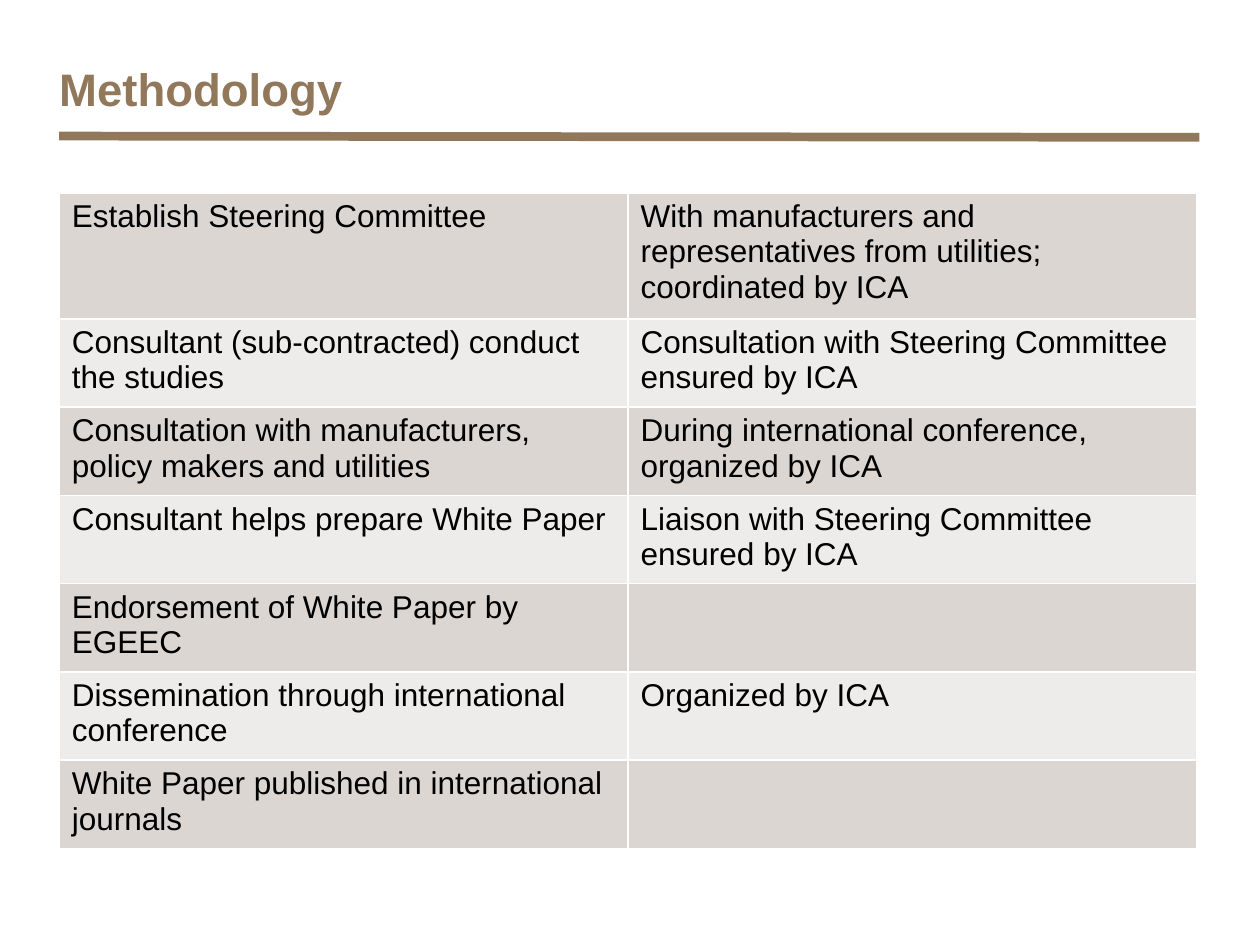
from lxml import etree
from pptx import Presentation
from pptx.dml.color import RGBColor
from pptx.enum.shapes import MSO_CONNECTOR
from pptx.oxml.ns import qn
from pptx.util import Inches, Pt

STRAIGHT = MSO_CONNECTOR.STRAIGHT

# Content
TITLE = "Methodology"
STEPS = [
    ("Establish Steering Committee",
     "With manufacturers and representatives from utilities; coordinated by ICA"),
    ("Consultant (sub-contracted) conduct the studies",
     "Consultation with Steering Committee ensured by ICA"),
    ("Consultation with manufacturers, policy makers and utilities",
     "During international conference, organized by ICA"),
    ("Consultant helps prepare White Paper",
     "Liaison with Steering Committee ensured by ICA"),
    ("Endorsement of White Paper by EGEEC", ""),
    ("Dissemination through international conference", "Organized by ICA"),
    ("White Paper published in international journals", ""),
]

THEME = {
    "font": "Arial",
    "accent": "91785B",
    "text": "000000",
    "bands": ("DCD6D2", "EEECEA"),
    "border": "FFFFFF",
    "title_size": 26,
    "body_size": 18,
}

# Layout, in inches
LEFT = 0.47
TABLE_TOP, TABLE_WIDTH = 1.53, 9.03
FIRST_ROW, OTHER_ROWS = 0.94, 0.66


def set_font(paragraph, size, color, bold=False):
    font = paragraph.font
    font.name = THEME["font"]
    font.size = Pt(size)
    font.bold = bold
    font.color.rgb = RGBColor.from_string(color)


def add_borders(cell, color, width):
    properties = cell._tc.get_or_add_tcPr()
    for position, side in enumerate(("lnL", "lnR", "lnT", "lnB")):
        border = etree.Element(qn(f"a:{side}"), w=str(Pt(width)))
        fill = etree.SubElement(border, qn("a:solidFill"))
        etree.SubElement(fill, qn("a:srgbClr"), val=color)
        properties.insert(position, border)


prs = Presentation()
prs.slide_width, prs.slide_height = Inches(10), Inches(7.5)
slide = prs.slides.add_slide(prs.slide_layouts[6])

# Rule under the title
rule = slide.shapes.add_connector(
    STRAIGHT, Inches(LEFT), Inches(1.08), Inches(9.52), Inches(1.09))
rule.line.color.rgb = RGBColor.from_string(THEME["accent"])
rule.line.width = Pt(5)
etree.SubElement(rule._element.spPr, qn("a:effectLst"))

# Title
heading = slide.shapes.add_textbox(
    Inches(LEFT), Inches(0.44), Inches(8.48), Inches(0.58)).text_frame
heading.word_wrap = True
heading.margin_left = heading.margin_right = heading.margin_bottom = 0
heading.margin_top = Inches(0.04)
heading.text = TITLE
set_font(heading.paragraphs[0], THEME["title_size"], THEME["accent"], bold=True)

# Table of steps
row_heights = [FIRST_ROW] + [OTHER_ROWS] * (len(STEPS) - 1)
steps_table = slide.shapes.add_table(
    len(STEPS), 2, Inches(LEFT), Inches(TABLE_TOP),
    Inches(TABLE_WIDTH), Inches(sum(row_heights))).table
steps_table.first_row = False

for row_index, (step, height) in enumerate(zip(STEPS, row_heights)):
    steps_table.rows[row_index].height = Inches(height)
    band = THEME["bands"][row_index % 2]
    for column_index, wording in enumerate(step):
        cell = steps_table.cell(row_index, column_index)
        cell.text = wording
        set_font(cell.text_frame.paragraphs[0], THEME["body_size"], THEME["text"])
        cell.fill.solid()
        cell.fill.fore_color.rgb = RGBColor.from_string(band)
        add_borders(cell, THEME["border"], 1)

prs.save("out.pptx")
